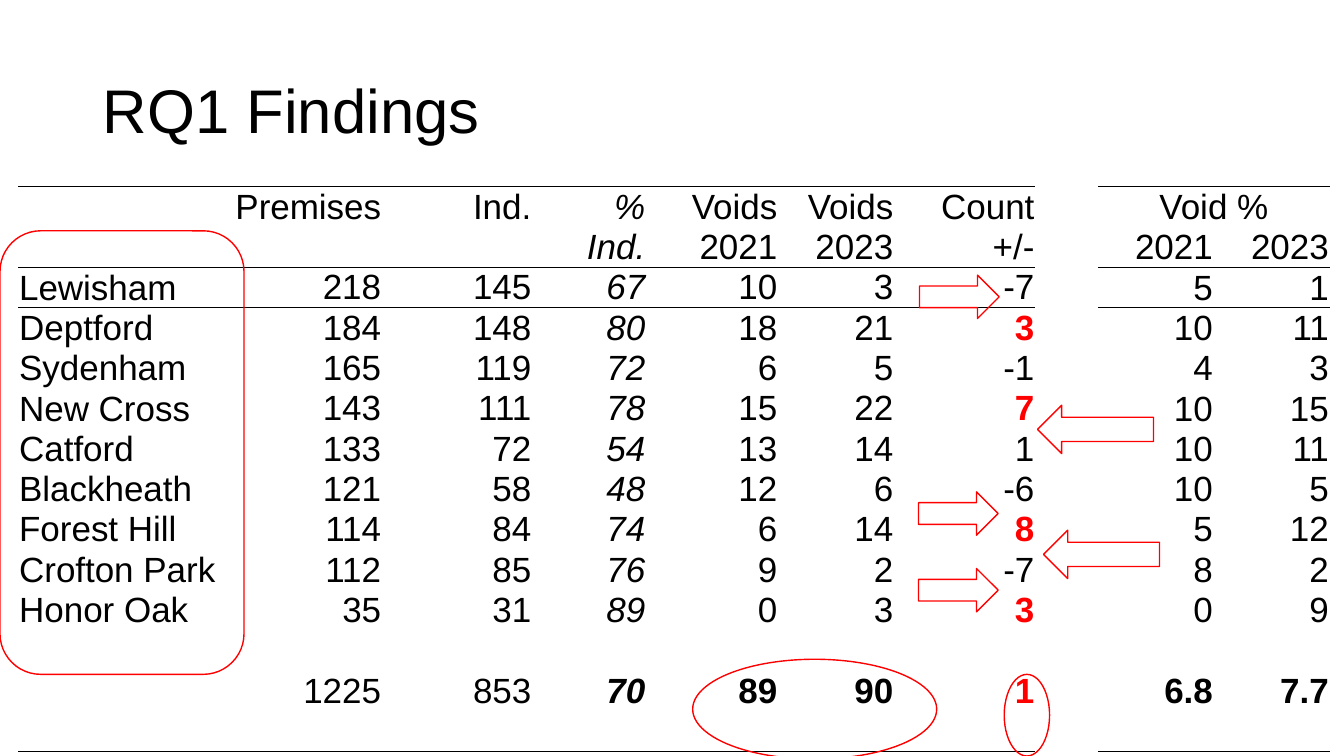
from lxml import etree
from pptx import Presentation
from pptx.dml.color import RGBColor
from pptx.enum.shapes import MSO_SHAPE
from pptx.enum.text import MSO_ANCHOR, PP_ALIGN
from pptx.oxml.ns import qn
from pptx.util import Inches, Pt

LEFT, CENTER, RIGHT = PP_ALIGN.LEFT, PP_ALIGN.CENTER, PP_ALIGN.RIGHT
MIDDLE, BOTTOM = MSO_ANCHOR.MIDDLE, MSO_ANCHOR.BOTTOM
ROUNDED, ELLIPSE = MSO_SHAPE.ROUNDED_RECTANGLE, MSO_SHAPE.OVAL
LEFT_ARROW, RIGHT_ARROW = MSO_SHAPE.LEFT_ARROW, MSO_SHAPE.RIGHT_ARROW

FONT = "Arial"
BLACK, RED = "000000", "FF0000"
PLAIN_STYLE = "{2D5ABB26-0587-4C30-8999-92F81FD0307C}"  # no style, no grid

COLUMN_WIDTHS = [2.07, 1.54, 1.49, 1.13, 1.31, 1.15, 1.4, 0.62, 1.15, 1.15]
ROW_HEIGHT = 0.4
NAME, SHARE, COUNT, GAP, VOID_2021, VOID_2023 = 0, 3, 6, 7, 8, 9
TOTAL_ROW = 12
RISES = {3, 5, 8, 10, TOTAL_ROW}  # rows whose count change is red and bold
FINDINGS = [
    ["", "Premises", "Ind.", "%", "Voids", "Voids", "Count", "", "Void %", ""],
    ["", "", "", "Ind.", "2021", "2023", "+/-", "", "2021", "2023"],
    ["Lewisham", "218", "145", "67", "10", "3", "-7", "", "5", "1"],
    ["Deptford", "184", "148", "80", "18", "21", "3", "", "10", "11"],
    ["Sydenham", "165", "119", "72", "6", "5", "-1", "", "4", "3"],
    ["New Cross", "143", "111", "78", "15", "22", "7", "", "10", "15"],
    ["Catford", "133", "72", "54", "13", "14", "1", "", "10", "11"],
    ["Blackheath", "121", "58", "48", "12", "6", "-6", "", "10", "5"],
    ["Forest Hill", "114", "84", "74", "6", "14", "8", "", "5", "12"],
    ["Crofton Park", "112", "85", "76", "9", "2", "-7", "", "8", "2"],
    ["Honor Oak", "35", "31", "89", "0", "3", "3", "", "0", "9"],
    [""] * 10,
    ["", "1225", "853", "70", "89", "90", "1", "", "6.8", "7.7"],
    [""] * 10,
]
# Table edges that carry a rule, by row
RULES = {0: ["lnT"], 1: ["lnB"], 2: ["lnT"], len(FINDINGS) - 1: ["lnB"]}

# Outlined marks: shape, left, top, width, height
MARKS = [
    (ROUNDED, 0, 2.29, 2.42, 4.4),
    (LEFT_ARROW, 10.29, 4.02, 1.15, 0.48),
    (LEFT_ARROW, 10.35, 5.26, 1.15, 0.48),
    (RIGHT_ARROW, 9.12, 2.73, 0.79, 0.43),
    (RIGHT_ARROW, 9.11, 4.88, 0.79, 0.43),
    (RIGHT_ARROW, 9.11, 5.64, 0.79, 0.43),
    (ELLIPSE, 6.87, 6.54, 2.42, 0.99),
    (ELLIPSE, 9.96, 6.69, 0.45, 0.81),
]


def rgb(color):
    return RGBColor.from_string(color)


def format_run(run, size, color=BLACK, bold=False, italic=False):
    run.font.name = FONT
    run.font.size = Pt(size)
    run.font.bold = bold
    run.font.italic = italic
    run.font.color.rgb = rgb(color)


def add_rule(cell, edge):
    line = etree.SubElement(cell._tc.get_or_add_tcPr(), qn(f"a:{edge}"), w=str(Pt(0.5)))
    fill = etree.SubElement(line, qn("a:solidFill"))
    etree.SubElement(fill, qn("a:srgbClr"), val=BLACK)


def add_title(slide, left, top, width, height):
    title = slide.shapes.title
    title.left, title.top = Inches(left), Inches(top)
    title.width, title.height = Inches(width), Inches(height)
    title.text_frame.text = "RQ1 Findings"
    title.text_frame.vertical_anchor = MIDDLE
    heading = title.text_frame.paragraphs[0]
    heading.alignment = LEFT
    heading.line_spacing = 0.9
    format_run(heading.runs[0], 44)


def fill_cell(cell, row, column, text):
    cell.margin_left = cell.margin_right = cell.margin_top = Inches(0.01)
    cell.margin_bottom = 0
    low = column in (NAME, VOID_2021, VOID_2023) and row != 1
    cell.vertical_anchor = BOTTOM if low else MIDDLE
    if column != GAP:
        for edge in RULES.get(row, []):
            add_rule(cell, edge)
    cell.fill.background()
    if not text:
        return
    entry = cell.text_frame.paragraphs[0]
    entry.text = text
    entry.alignment = LEFT if column == NAME else RIGHT
    rise = column == COUNT and row in RISES
    bold = rise or (row == TOTAL_ROW and column >= SHARE)
    format_run(entry.runs[0], 25, RED if rise else BLACK, bold, column == SHARE)


def add_findings(slide, left, top):
    frame = slide.shapes.add_table(
        len(FINDINGS), len(COLUMN_WIDTHS), Inches(left), Inches(top),
        Inches(sum(COLUMN_WIDTHS)), Inches(ROW_HEIGHT * len(FINDINGS)))
    findings = frame.table
    findings.first_row = findings.horz_banding = False
    for style in frame._element.iter(qn("a:tableStyleId")):
        style.text = PLAIN_STYLE
    for column, width in zip(findings.columns, COLUMN_WIDTHS):
        column.width = Inches(width)
    for row, entries in enumerate(FINDINGS):
        findings.rows[row].height = Inches(ROW_HEIGHT)
        for column, text in enumerate(entries):
            fill_cell(findings.cell(row, column), row, column, text)
    # The void share heading spans both years
    void_heading = findings.cell(0, VOID_2021)
    void_heading.merge(findings.cell(0, VOID_2023))
    void_heading.text_frame.paragraphs[0].alignment = CENTER


def add_mark(slide, kind, left, top, width, height):
    mark = slide.shapes.add_shape(
        kind, Inches(left), Inches(top), Inches(width), Inches(height))
    mark.shadow.inherit = False
    mark.fill.background()
    mark.line.color.rgb = rgb(RED)
    mark.line.width = Pt(1)


def main():
    deck = Presentation()
    deck.slide_width, deck.slide_height = Inches(13.33), Inches(7.5)
    slide = deck.slides.add_slide(deck.slide_layouts[5])
    add_title(slide, 0.92, 0.4, 11.5, 1.45)
    add_findings(slide, 0.18, 1.85)
    for mark in MARKS:
        add_mark(slide, *mark)
    deck.save("out.pptx")


if __name__ == "__main__":
    main()
